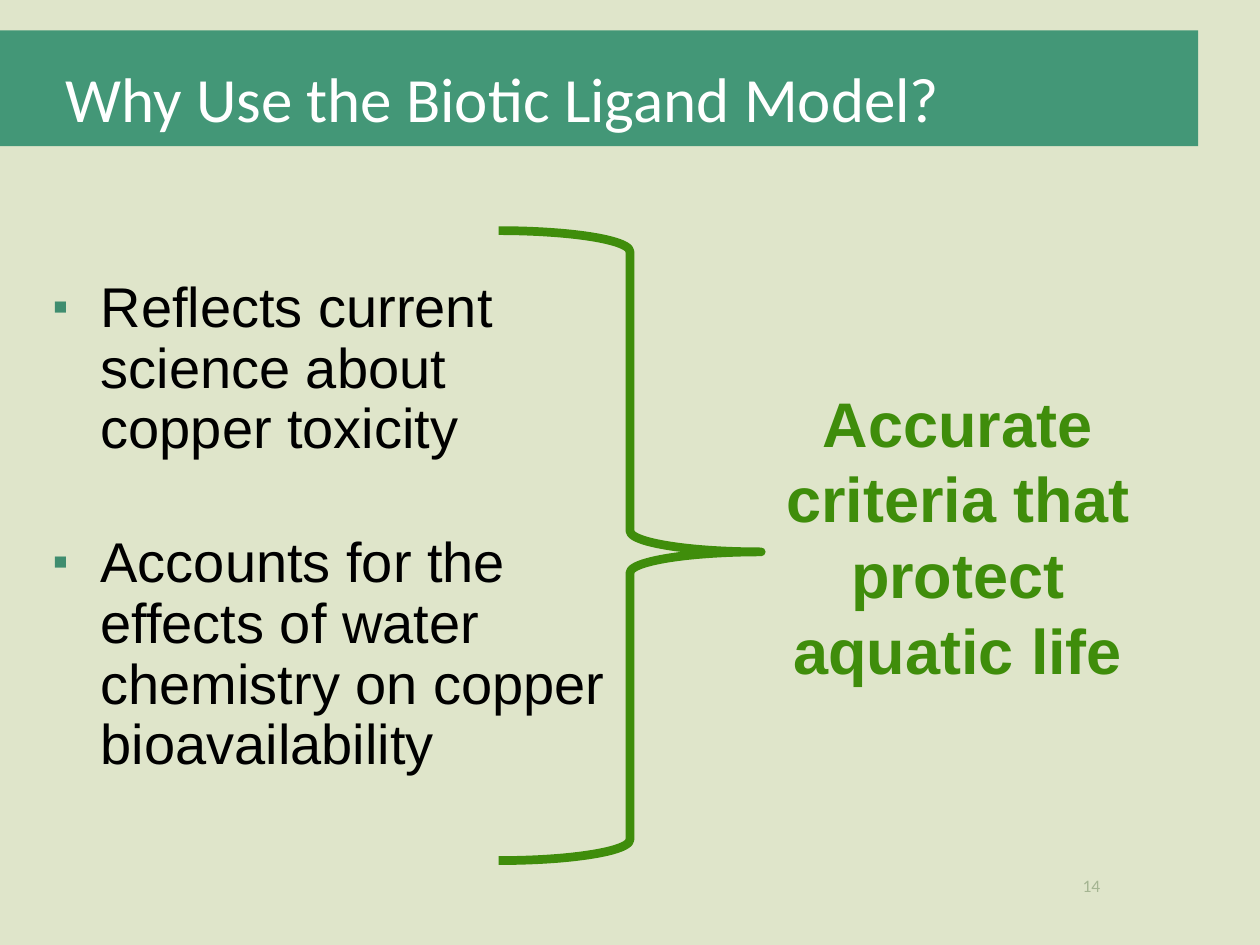
from lxml import etree
from pptx import Presentation
from pptx.dml.color import RGBColor
from pptx.enum.shapes import MSO_SHAPE as SHAPE
from pptx.enum.text import MSO_ANCHOR as ANCHOR, PP_ALIGN as ALIGN
from pptx.oxml.ns import qn
from pptx.util import Pt

GREEN = "3F8D0B"


def rgb(value):
    return RGBColor.from_string(value)


def add_run(paragraph, text, size, font, color, bold=False):
    run = paragraph.add_run()
    run.text = text
    run.font.size = Pt(size)
    run.font.name = font
    run.font.bold = bold
    run.font.color.rgb = rgb(color)


prs = Presentation()
prs.slide_width, prs.slide_height = Pt(720), Pt(540)
slide = prs.slides.add_slide(prs.slide_layouts[5])
slide.background.fill.solid()
slide.background.fill.fore_color.rgb = rgb("DFE5CA")
shapes = slide.shapes

# Title band, sent behind the title
band = shapes.add_shape(SHAPE.RECTANGLE, 0, Pt(17.3), Pt(684.7), Pt(66.2))
band.shadow.inherit = False
band.fill.solid()
band.fill.fore_color.rgb = rgb("439777")
band.line.fill.background()
shapes.title._element.addprevious(band._element)

# Title
title = shapes.title
title.left, title.top, title.width, title.height = Pt(30.2), Pt(30.2), Pt(671), Pt(51.1)
title.text_frame.vertical_anchor = ANCHOR.TOP
heading = title.text_frame.paragraphs[0]
heading.alignment = ALIGN.LEFT
add_run(heading, "Why Use the Biotic Ligand Model?", 36, "Calibri", "FFFFFF")

# Reasons, as a bulleted list
reasons = shapes.add_textbox(Pt(20.9), Pt(156.2), Pt(342), Pt(360)).text_frame
reasons.word_wrap = True
for i, reason in enumerate([
    "Reflects current science about copper toxicity",
    "Accounts for the effects of water chemistry on copper bioavailability",
]):
    item = reasons.add_paragraph() if i else reasons.paragraphs[0]
    item.line_spacing = 0.9
    item.space_before = Pt(42 if i else 10)
    props = item._p.get_or_add_pPr()
    props.set("marL", str(Pt(29.5)))
    props.set("indent", str(Pt(-27.4)))
    bullet_color = etree.SubElement(props, qn("a:buClr"))
    etree.SubElement(bullet_color, qn("a:srgbClr"), val="3F8D6F")
    etree.SubElement(props, qn("a:buSzPct"), val="80000")
    etree.SubElement(props, qn("a:buFont"), typeface="Arial")
    etree.SubElement(props, qn("a:buChar"), char="▪")
    add_run(item, reason, 32, "Arial", "000000")

# Brace from the reasons to the result
brace = shapes.add_shape(SHAPE.RIGHT_BRACE, Pt(285), Pt(131.8), Pt(150), Pt(360))
brace.shadow.inherit = False
brace.adjustments[0] = 0.08
brace.adjustments[1] = 0.51
brace.fill.background()
brace.line.color.rgb = rgb(GREEN)
brace.line.width = Pt(5)

# Result
result = shapes.add_textbox(Pt(435), Pt(216), Pt(224.6), Pt(181.4)).text_frame
result.word_wrap = True
conclusion = result.paragraphs[0]
conclusion.alignment = ALIGN.CENTER
add_run(conclusion, "Accurate criteria that protect aquatic life", 36, "Arial", GREEN, bold=True)

# Slide number
page = shapes.add_textbox(Pt(576), Pt(491.8), Pt(59.8), Pt(28.8)).text_frame
page.word_wrap = True
page.vertical_anchor = ANCHOR.MIDDLE
page.paragraphs[0].alignment = ALIGN.RIGHT
add_run(page.paragraphs[0], "14", 10, "Calibri", "A5B592")

prs.save("out.pptx")
